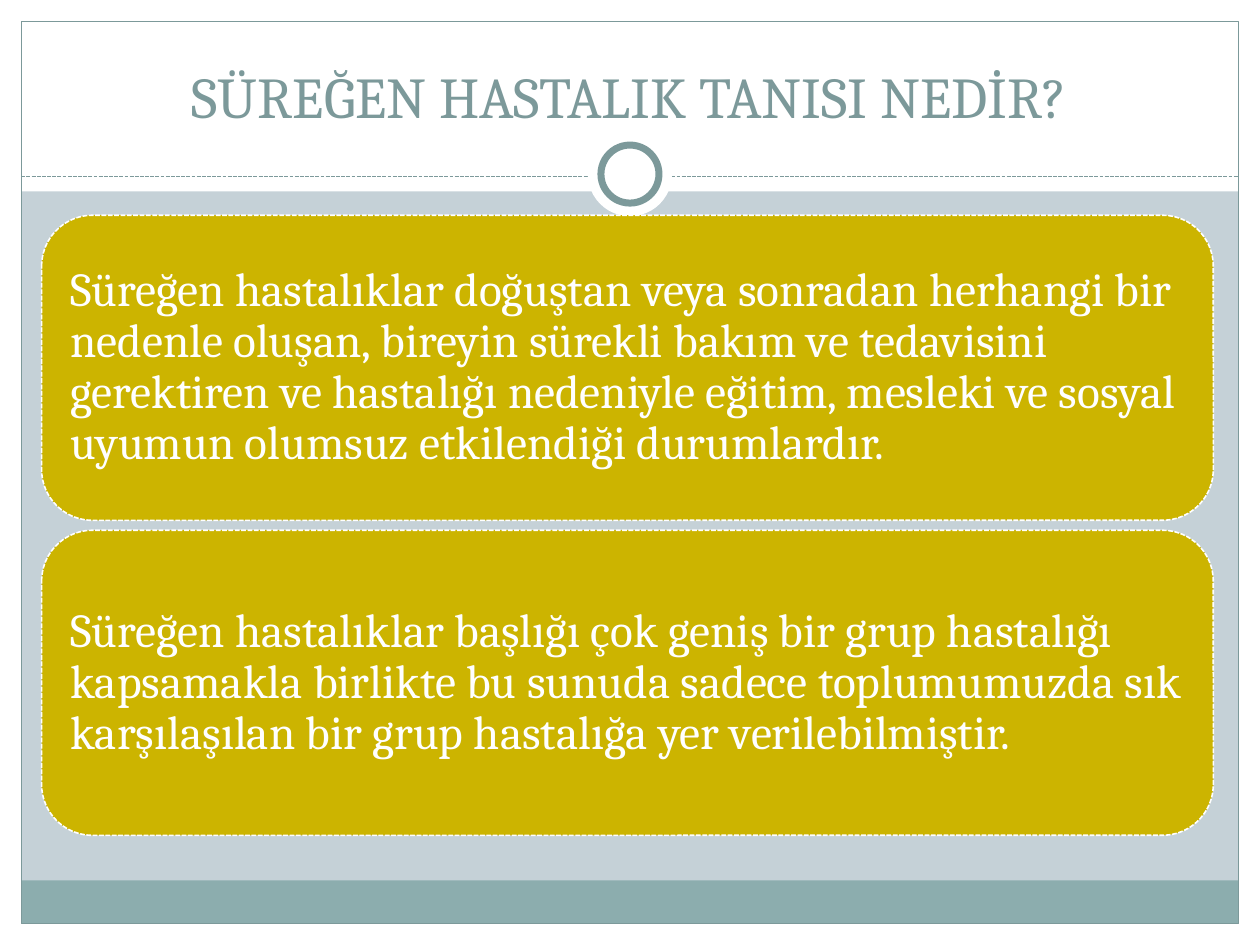
import pptx
import pptx.util
import pptx.dml.color
import pptx.enum.dml
import pptx.enum.shapes
import pptx.enum.text
from dataclasses import dataclass
from lxml import etree
from pptx.util import Cm, Pt

SHAPE = pptx.enum.shapes.MSO_SHAPE
DASH = pptx.enum.dml.MSO_LINE.SQUARE_DOT
ALIGN = pptx.enum.text.PP_ALIGN
ANCHOR = pptx.enum.text.MSO_ANCHOR
DRAWING_NS = "http://schemas.openxmlformats.org/drawingml/2006/main"


@dataclass(frozen=True)
class Theme:
    font: str = "Cambria"
    background: str = "C5D1D7"
    white: str = "FFFFFF"
    accent: str = "7C999A"
    footer: str = "8CADAE"
    card: str = "CCB400"
    title_size: float = 33
    body_size: float = 27


THEME = Theme()
WIDTH, HEIGHT, MARGIN = 25.4, 19.05, 0.43
CARD_TOP, CARD_HEIGHT, CARD_GAP = 4.34, 6.15, 0.2

TITLE = "SÜREĞEN HASTALIK TANISI NEDİR?"
CARDS = [
    "Süreğen hastalıklar doğuştan veya sonradan herhangi bir nedenle oluşan, "
    "bireyin sürekli bakım ve tedavisini gerektiren ve hastalığı nedeniyle "
    "eğitim, mesleki ve sosyal uyumun olumsuz etkilendiği durumlardır.",
    "Süreğen hastalıklar başlığı çok geniş bir grup hastalığı kapsamakla "
    "birlikte bu sunuda sadece toplumumuzda sık karşılaşılan bir grup "
    "hastalığa yer verilebilmiştir.",
]


def rgb(value):
    return pptx.dml.color.RGBColor.from_string(value)


def set_line(line, color, width, dash=None):
    line.color.rgb = rgb(color)
    line.width = Pt(width)
    if dash is not None:
        line.dash_style = dash


def add_panel(page, kind, left, top, width, height, fill=None, line=None, dash=None):
    """Add a flat shape; line is a (color, width) pair."""
    shape = page.shapes.add_shape(kind, Cm(left), Cm(top), Cm(width), Cm(height))
    shape.shadow.inherit = False
    if fill:
        shape.fill.solid()
        shape.fill.fore_color.rgb = rgb(fill)
    else:
        shape.fill.background()
    if line:
        set_line(shape.line, *line, dash)
    else:
        shape.line.fill.background()
    return shape


def add_divider(page, top):
    divider = page.shapes.add_connector(
        pptx.enum.shapes.MSO_CONNECTOR.STRAIGHT,
        Cm(MARGIN), Cm(top), Cm(WIDTH - MARGIN), Cm(top))
    set_line(divider.line, THEME.accent, 0.75, DASH)
    etree.SubElement(divider.element.spPr, f"{{{DRAWING_NS}}}effectLst")


def add_circle(page, center_y, diameter, line=None):
    add_panel(page, SHAPE.OVAL, (WIDTH - diameter) / 2, center_y - diameter / 2,
              diameter, diameter, THEME.white, line)


def write_text(frame, text, size, color, align, anchor):
    frame.text = text
    frame.word_wrap = True
    frame.auto_size = pptx.enum.text.MSO_AUTO_SIZE.NONE
    frame.vertical_anchor = anchor
    para = frame.paragraphs[0]
    para.alignment = align
    for span in para.runs:
        span.font.name = THEME.font
        span.font.size = Pt(size)
        span.font.color.rgb = rgb(color)


def add_frame(page):
    # White margins and header band
    for left, top, width, height in [
        (0, HEIGHT - MARGIN, WIDTH, MARGIN),
        (0, 0, WIDTH, 3.86),
        (0, 0, MARGIN, HEIGHT),
        (WIDTH - MARGIN, 0, MARGIN, HEIGHT),
    ]:
        add_panel(page, SHAPE.RECTANGLE, left, top, width, height, THEME.white)

    # Footer band and outline
    inner = WIDTH - 2 * MARGIN
    add_panel(page, SHAPE.RECTANGLE, MARGIN, 17.75, inner, 0.87, THEME.footer)
    add_panel(page, SHAPE.RECTANGLE, MARGIN, MARGIN, inner, HEIGHT - 2 * MARGIN,
              line=(THEME.accent, 0.75))

    # Divider with its ring
    add_divider(page, 3.56)
    add_circle(page, 3.51, 1.7)
    add_circle(page, 3.51, 1.17, (THEME.accent, 4))


def place_title(page):
    title = page.shapes.title
    title.left, title.top = Cm(0.84), Cm(0.64)
    title.width, title.height = Cm(23.7), Cm(2.11)
    write_text(title.text_frame, TITLE, THEME.title_size, THEME.accent,
               ALIGN.CENTER, ANCHOR.BOTTOM)
    # Bring the title in front of the header band
    title.element.getparent().append(title.element)


def add_card(page, index, text):
    top = CARD_TOP + index * (CARD_HEIGHT + CARD_GAP)
    card = add_panel(page, SHAPE.ROUNDED_RECTANGLE, 0.84, top, 23.62, CARD_HEIGHT,
                     THEME.card, (THEME.white, 0.9), DASH)
    frame = card.text_frame
    frame.margin_left = frame.margin_right = Cm(0.28)
    frame.margin_top = frame.margin_bottom = Cm(0.28)
    write_text(frame, text, THEME.body_size, THEME.white, ALIGN.LEFT, ANCHOR.MIDDLE)
    frame.paragraphs[0].line_spacing = 0.9


def main():
    deck = pptx.Presentation()
    deck.slide_width, deck.slide_height = Cm(WIDTH), Cm(HEIGHT)
    page = deck.slides.add_slide(deck.slide_layouts.get_by_name("Title Only"))
    page.background.fill.solid()
    page.background.fill.fore_color.rgb = rgb(THEME.background)

    add_frame(page)
    place_title(page)
    for index, text in enumerate(CARDS):
        add_card(page, index, text)

    deck.save("out.pptx")


if __name__ == "__main__":
    main()
